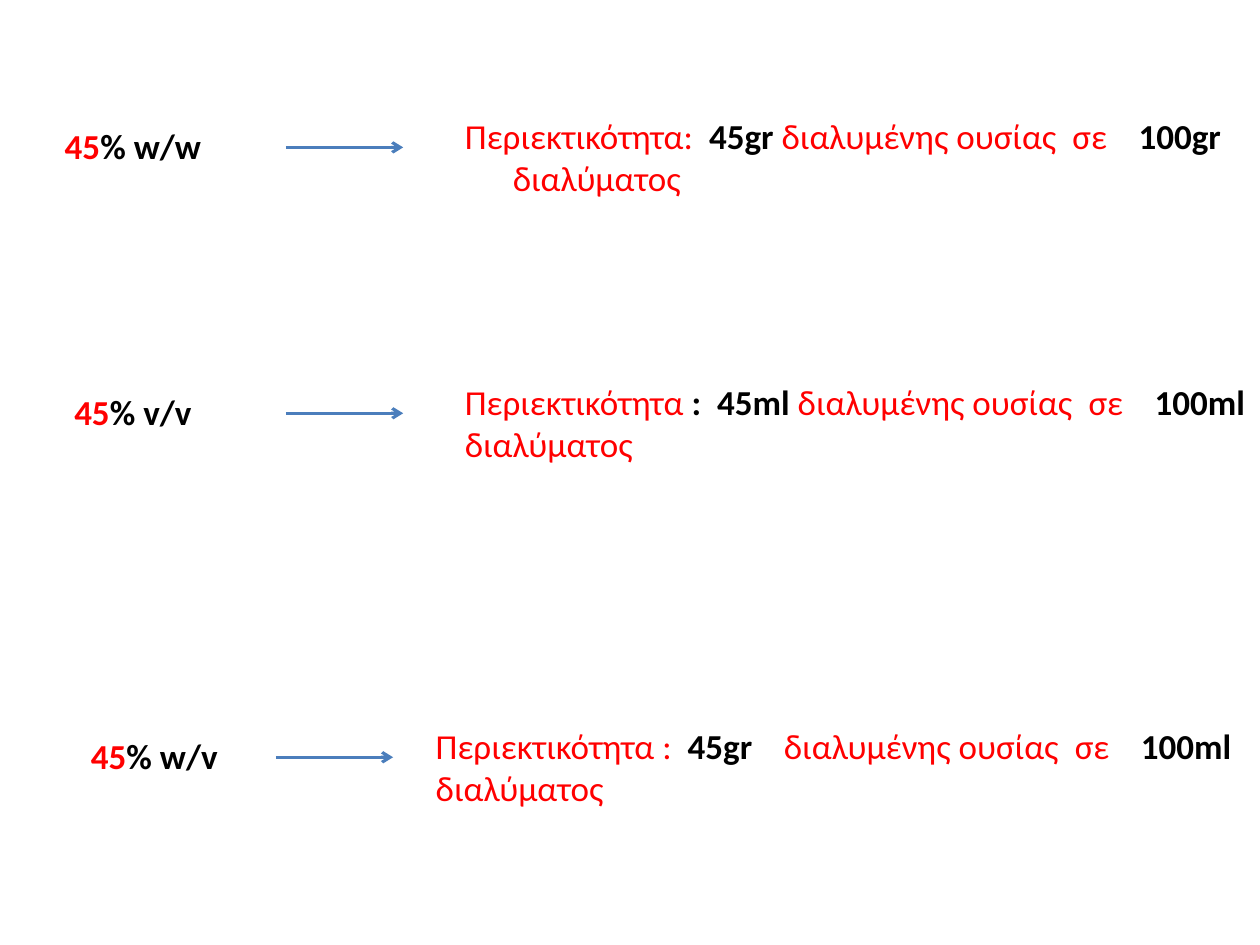
from pptx import Presentation
from pptx.dml.color import RGBColor
from pptx.enum.shapes import MSO_CONNECTOR
from pptx.enum.text import MSO_AUTO_SIZE, PP_ALIGN
from pptx.oxml.ns import qn
from pptx.util import Inches, Pt
from lxml import etree

STRAIGHT = MSO_CONNECTOR.STRAIGHT
NO_FIT = MSO_AUTO_SIZE.NONE
CENTER = PP_ALIGN.CENTER
COLORS = {"red": "FF0000", "black": "000000", "arrow": "4B7EBC"}
ROW_H = 0.63
LABEL_W = 2.11
ARROW_W = 0.93
SPACE_WIDTH = 4.5

rows = [
    (0.86, 0, 2.27, 3.59, "% w/w", [
        ("Περιεκτικότητα:", "red", False, 2), ("45gr", "black", True, 1),
        ("διαλυμένης ουσίας", "red", False, 2), ("σε", "red", False, 4),
        ("100gr", "black", True, 1), ("διαλύματος", "red", False, 0)]),
    (2.97, 0, 2.27, 3.59, "% v/v", [
        ("Περιεκτικότητα", "red", False, 1), (":", "black", True, 2),
        ("45ml", "black", True, 1), ("διαλυμένης ουσίας", "red", False, 2),
        ("σε", "red", False, 4), ("100ml", "black", True, 1),
        ("διαλύματος", "red", False, 0)]),
    (5.7, 0.17, 2.19, 3.36, "% w/v", [
        ("Περιεκτικότητα :", "red", False, 2), ("45gr", "black", True, 4),
        ("διαλυμένης ουσίας", "red", False, 2), ("σε", "red", False, 4),
        ("100ml", "black", True, 1), ("διαλύματος", "red", False, 0)]),
]


def add_run(p, text, color, bold):
    r = p.add_run()
    r.text = text
    r.font.name = "Calibri"
    r.font.size = Pt(20)
    r.font.bold = bold
    r.font.color.rgb = RGBColor.from_string(COLORS[color])
    return r


def place(sp, left, top, width):
    sp.left, sp.top = Inches(left), Inches(top)
    sp.width, sp.height = Inches(width), Inches(ROW_H)
    tf = sp.text_frame
    tf.word_wrap = True
    tf.auto_size = NO_FIT
    p = tf.paragraphs[0]
    p.space_before = Pt(0)
    return p


prs = Presentation()
prs.slide_width, prs.slide_height = Inches(10), Inches(7.5)
s = prs.slides.add_slide(prs.slide_layouts[1])
title = s.shapes.title.element
title.getparent().remove(title)

for i, (top, label_x, arrow_x, text_x, unit, parts) in enumerate(rows):
    sp = s.placeholders[1] if i == 0 else s.shapes.add_textbox(0, 0, 0, 0)
    p = place(sp, text_x, top, 10 - text_x)
    if i == 0:
        pPr = p._p.get_or_add_pPr()
        pPr.set("marL", str(Inches(0.38)))
        pPr.set("indent", str(Inches(-0.38)))
        etree.SubElement(pPr, qn("a:buNone"))
    for text, color, bold, gap in parts:
        add_run(p, text, color, bold)
        if gap:
            r = add_run(p, " ", color, bold)
            r.font._element.set("spc", str(int((gap - 1) * SPACE_WIDTH * 100)))

    sp = s.shapes.add_textbox(0, 0, 0, 0)
    p = place(sp, label_x, top + 0.08, LABEL_W)
    p.alignment = CENTER
    add_run(p, "45", "red", True)
    add_run(p, unit, "black", True)

    y = Inches(top + 0.31)
    arrow = s.shapes.add_connector(STRAIGHT, Inches(arrow_x), y,
                                   Inches(arrow_x + ARROW_W), y)
    arrow.line.color.rgb = RGBColor.from_string(COLORS["arrow"])
    arrow.line.width = Pt(1.75)
    etree.SubElement(arrow.line._get_or_add_ln(), qn("a:tailEnd"), type="arrow")
    etree.SubElement(arrow._element.spPr, qn("a:effectLst"))

prs.save("out.pptx")
